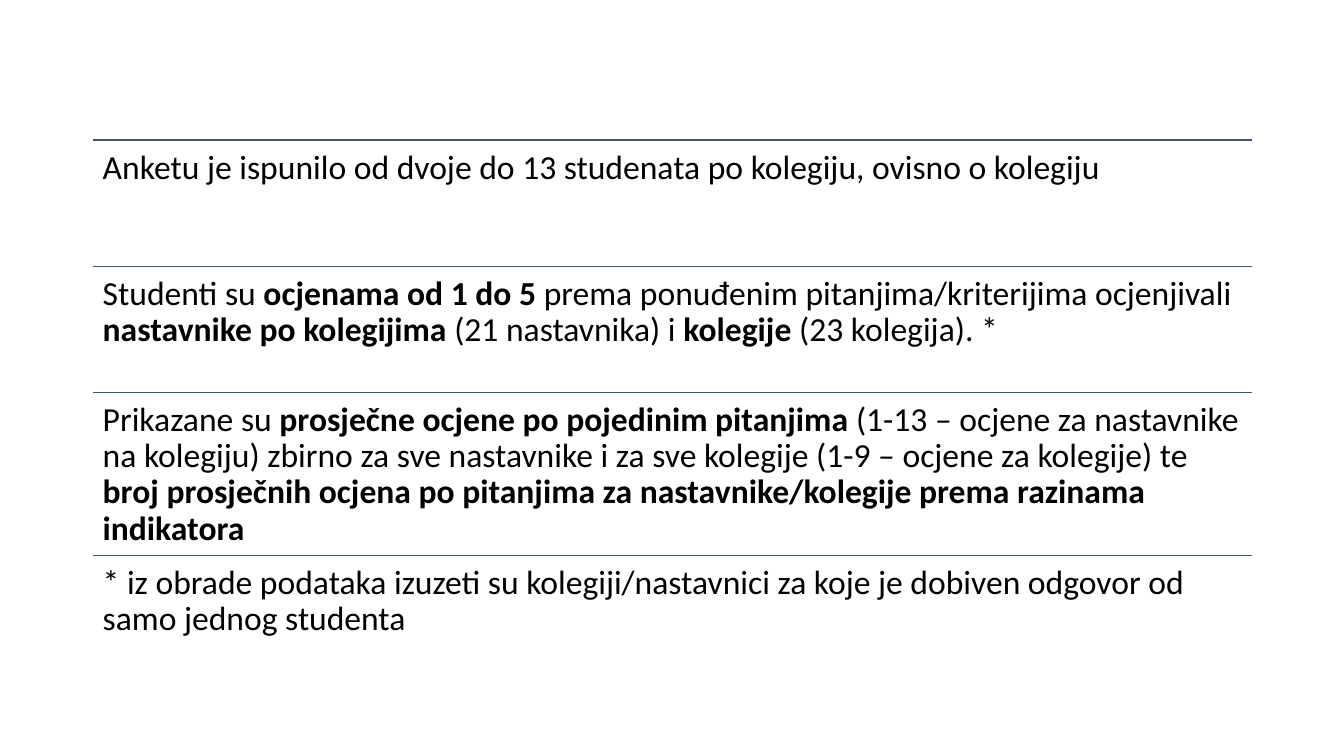
from lxml import etree
from pptx import Presentation
from pptx.dml.color import RGBColor
from pptx.enum import shapes, text
from pptx.oxml.ns import qn
from pptx.util import Cm, Pt

COLORS = {"text": "000000", "rule": "44546A"}
LEFT, TOP, WIDTH = 2.34, 3.53, 29.21

# Each row: height in cm, then (wording, bold) runs
ROWS = [
    (3.18, [("Anketu je ispunilo od dvoje do 13 studenata po kolegiju, ovisno o kolegiju", False)]),
    (3.18, [
        ("Studenti su ", False),
        ("ocjenama od 1 do 5 ", True),
        ("prema ponuđenim pitanjima/kriterijima ocjenjivali ", False),
        ("nastavnike po kolegijima ", True),
        ("(21 nastavnika) i ", False),
        ("kolegije", True),
        (" (23 kolegija). *", False),
    ]),
    (4.11, [
        ("Prikazane su ", False),
        ("prosječne ocjene po pojedinim pitanjima ", True),
        ("(1-13 – ocjene za nastavnike na kolegiju) zbirno za sve nastavnike "
         "i za sve kolegije (1-9 – ocjene za kolegije) te ", False),
        ("broj prosječnih ocjena po pitanjima za nastavnike/kolegije "
         "prema razinama indikatora", True),
    ]),
    (3.18, [("* iz obrade podataka izuzeti su kolegiji/nastavnici za koje je "
             "dobiven odgovor od samo jednog studenta", False)]),
]


def add_rule(s, top):
    line = s.shapes.add_connector(
        shapes.MSO_CONNECTOR.STRAIGHT, Cm(LEFT), Cm(top), Cm(LEFT + WIDTH), Cm(top))
    line.line.color.rgb = RGBColor.from_string(COLORS["rule"])
    line.line.width = Pt(1)
    etree.SubElement(line._element.spPr, qn("a:effectLst"))


def add_row_text(s, top, height, runs):
    sp = s.shapes.add_textbox(Cm(LEFT), Cm(top), Cm(WIDTH), Cm(height))
    tf = sp.text_frame
    tf.word_wrap = True
    tf.vertical_anchor = text.MSO_ANCHOR.TOP
    tf.margin_left = tf.margin_top = tf.margin_right = tf.margin_bottom = Cm(0.25)
    p = tf.paragraphs[0]
    p.line_spacing = 0.9
    p.font.name = "Calibri"
    p.font.size = Pt(24)
    p.font.color.rgb = RGBColor.from_string(COLORS["text"])
    for wording, bold in runs:
        r = p.add_run()
        r.text = wording
        r.font.bold = bold


def main():
    prs = Presentation()
    prs.slide_width, prs.slide_height = Cm(33.87), Cm(19.05)
    s = prs.slides.add_slide(prs.slide_layouts.get_by_name("Blank"))
    top = TOP
    for height, runs in ROWS:
        add_rule(s, top)
        add_row_text(s, top, height, runs)
        top += height
    prs.save("out.pptx")


if __name__ == "__main__":
    main()
